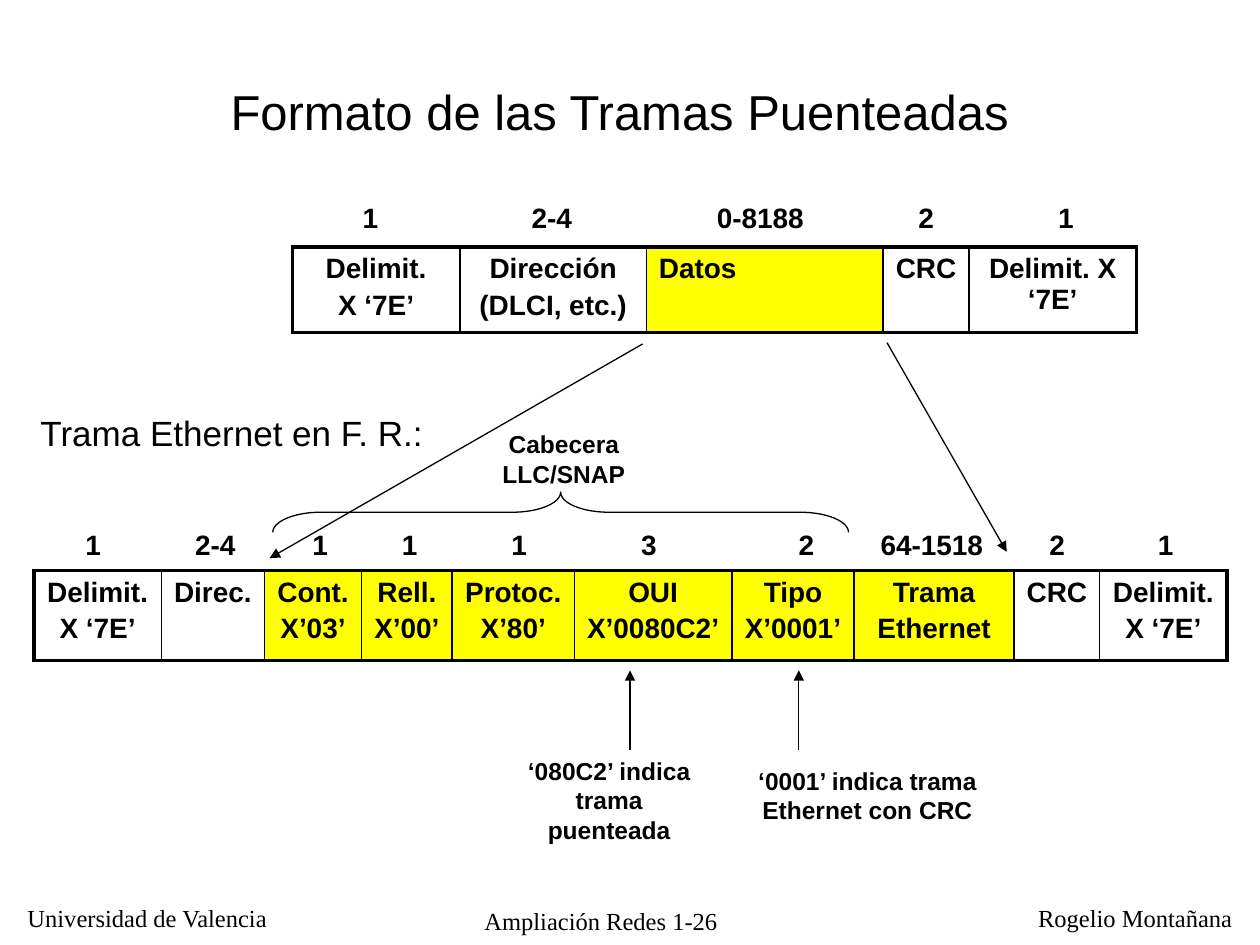
from dataclasses import dataclass

from lxml import etree
from pptx import Presentation
from pptx.dml.color import RGBColor
from pptx.enum.shapes import MSO_CONNECTOR, MSO_SHAPE
from pptx.enum.text import MSO_ANCHOR, MSO_AUTO_SIZE, PP_ALIGN
from pptx.oxml.ns import qn
from pptx.util import Inches, Pt

BLACK = RGBColor(0x00, 0x00, 0x00)
YELLOW = RGBColor(0xFF, 0xFF, 0x00)
LEFT, CENTER = PP_ALIGN.LEFT, PP_ALIGN.CENTER
TOP = MSO_ANCHOR.TOP
GROW = MSO_AUTO_SIZE.SHAPE_TO_FIT_TEXT
STRAIGHT = MSO_CONNECTOR.STRAIGHT
RECTANGLE, BRACE = MSO_SHAPE.RECTANGLE, MSO_SHAPE.RIGHT_BRACE

# Slide grid: 100 columns by 75 rows
GRID_COLUMNS, GRID_ROWS = 100, 75
WIDTH, HEIGHT = Inches(10), Inches(7.5)

TITLE = {"name": "Arial", "size": Pt(28), "bold": False}
HEADING = {"name": "Arial", "size": Pt(20), "bold": False}
FIELD = {"name": "Arial", "size": Pt(16), "bold": True}
CAPTION = {"name": "Arial", "size": Pt(14), "bold": True}
FOOTER = {"name": "Times New Roman", "size": Pt(14), "bold": False}

THIN, INNER, OUTER = Pt(0.75), Pt(1), Pt(2.25)
LABEL_HEIGHT = 3.7
LABEL_WIDTHS = {1: 3.2, 3: 5.2, 6: 8.9, 7: 10.2}  # by number of characters


@dataclass(frozen=True)
class Field:
    lines: tuple[str, ...]
    width: float
    size: str
    size_left: float
    payload: bool = False
    align: PP_ALIGN = CENTER


@dataclass(frozen=True)
class Frame:
    left: float
    top: float
    height: float
    label_top: float
    fields: tuple[Field, ...]


@dataclass(frozen=True)
class Note:
    lines: tuple[str, ...]
    area: tuple[float, float, float, float]
    font: dict
    align: PP_ALIGN = CENTER
    wrap: bool = True


@dataclass(frozen=True)
class Arrow:
    start: tuple[float, float]
    end: tuple[float, float]


ETHERNET_FRAME = Frame(2.7, 45.3, 7.1, 41.4, (
    Field(("Delimit.", "X ‘7E’"), 10.1, "1", 5.8),
    Field(("Direc.",), 8.2, "2-4", 14.5),
    Field(("Cont.", "X’03’"), 7.7, "1", 23.8, True),
    Field(("Rell.", "X’00’"), 7.2, "1", 30.9, True),
    Field(("Protoc.", "X’80’"), 9.7, "1", 39.6, True),
    Field(("OUI", "X’0080C2’"), 12.5, "3", 49.9, True),
    Field(("Tipo", "X’0001’"), 9.7, "2", 62.4, True),
    Field(("Trama", "Ethernet"), 12.7, "64-1518", 68.9, True),
    Field(("CRC",), 6.8, "2", 82.3),
    Field(("Delimit.", "X ‘7E’"), 10.1, "1", 90.9),
))
RELAY_FRAME = Frame(23.2, 19.6, 6.7, 15.4, (
    Field(("Delimit.", "X ‘7E’"), 13.3, "1", 27.8),
    Field(("Dirección", "(DLCI, etc.)"), 14.8, "2-4", 41.2),
    Field(("Datos",), 18.8, "0-8188", 55.9, True, LEFT),
    Field(("CRC",), 6.8, "2", 71.9),
    Field(("Delimit. X ‘7E’",), 13.3, "1", 83),
))
NOTES = (
    Note(("Ampliación Redes 1-26",), (35.1, 71.4, 25.2, 3), FOOTER),
    Note(("Universidad de Valencia",), (1.2, 71.2, 21.3, 3.3), FOOTER, LEFT, False),
    Note(("Rogelio Montañana",), (81.4, 71.2, 17.4, 3.3), FOOTER, LEFT, False),
    Note(("Trama Ethernet en F. R.:",), (1.9, 32.2, 33, 4.3), HEADING),
    Note(("‘080C2’ indica", "trama puenteada"), (39.6, 59.5, 17.5, 5.7), CAPTION),
    Note(("‘0001’ indica trama Ethernet con CRC",), (56.2, 60.3, 25.3, 5.7), CAPTION),
    Note(("Cabecera LLC/SNAP",), (38.8, 33.6, 11.9, 5.7), CAPTION),
)
ARROWS = (
    Arrow((51, 27.3), (21.4, 44.3)),
    Arrow((70.4, 27.2), (79.9, 43.8)),
    Arrow((50, 59.5), (50, 53.2)),
    Arrow((63.4, 59.5), (63.4, 53.2)),
)


def across(columns: float) -> int:
    return round(WIDTH * columns / GRID_COLUMNS)


def down(rows: float) -> int:
    return round(HEIGHT * rows / GRID_ROWS)


def place(left: float, top: float, width: float, height: float) -> tuple:
    return across(left), down(top), across(width), down(height)


def write(text_frame, lines, font: dict, align, before=Pt(0)) -> None:
    for index, line in enumerate(lines):
        para = text_frame.add_paragraph() if index else text_frame.paragraphs[0]
        para.alignment = align
        para.space_before = before
        span = para.add_run()
        span.text = line
        for name, value in font.items():
            setattr(span.font, name, value)
        span.font.color.rgb = BLACK


def draw_note(page, note: Note) -> None:
    box = page.shapes.add_textbox(*place(*note.area))
    box.text_frame.word_wrap = note.wrap
    box.text_frame.auto_size = GROW
    write(box.text_frame, note.lines, note.font, note.align)


def draw_title(page, text: str) -> None:
    title = page.shapes.title
    title.left, title.top, title.width, title.height = place(17.3, 6, 64.2, 5.7)
    title.text_frame.word_wrap = False
    title.text_frame.auto_size = GROW
    title.text_frame.vertical_anchor = TOP
    write(title.text_frame, (text,), TITLE, LEFT)


def draw_shape(page, kind, area: tuple, fill=None):
    shape = page.shapes.add_shape(kind, *place(*area))
    shape.shadow.inherit = False
    if fill is None:
        shape.fill.background()
    else:
        shape.fill.solid()
        shape.fill.fore_color.rgb = fill
    shape.line.color.rgb = BLACK
    shape.line.width = THIN
    return shape


def set_borders(cell, widths: dict) -> None:
    properties = cell._tc.get_or_add_tcPr()
    for index, (side, width) in enumerate(widths.items()):
        border = etree.Element(qn(f"a:{side}"), w=str(int(width)))
        fill = etree.SubElement(border, qn("a:solidFill"))
        etree.SubElement(fill, qn("a:srgbClr"), val=str(BLACK))
        properties.insert(index, border)


def draw_frame(page, frame: Frame) -> None:
    fields = frame.fields
    # Yellow band behind the payload fields
    first = next(i for i, field in enumerate(fields) if field.payload)
    band_left = frame.left + sum(field.width for field in fields[:first])
    band_width = sum(field.width for field in fields if field.payload)
    draw_shape(page, RECTANGLE, (band_left, frame.top, band_width, frame.height), YELLOW)

    # Fields
    total = sum(field.width for field in fields)
    area = place(frame.left, frame.top, total, frame.height)
    table = page.shapes.add_table(1, len(fields), *area).table
    table.first_row = table.horz_banding = False
    last = len(fields) - 1
    for index, field in enumerate(fields):
        table.columns[index].width = across(field.width)
        cell = table.cell(0, index)
        cell.fill.background()
        write(cell.text_frame, field.lines, FIELD, field.align, Pt(3.2))
        set_borders(cell, {"lnL": INNER if index else OUTER,
                           "lnR": OUTER if index == last else INNER,
                           "lnT": OUTER, "lnB": OUTER})

    # Field sizes in bytes
    for field in fields:
        label = (field.size_left, frame.label_top, LABEL_WIDTHS[len(field.size)], LABEL_HEIGHT)
        draw_note(page, Note((field.size,), label, FIELD, LEFT, False))


def draw_arrow(page, arrow: Arrow) -> None:
    (x1, y1), (x2, y2) = arrow.start, arrow.end
    line = page.shapes.add_connector(STRAIGHT, across(x1), down(y1), across(x2), down(y2))
    line.line.color.rgb = BLACK
    line.line.width = THIN
    etree.SubElement(line.line._get_or_add_ln(), qn("a:tailEnd"), type="triangle")
    etree.SubElement(line._element.spPr, qn("a:effectLst"))


def main() -> None:
    deck = Presentation()
    deck.slide_width, deck.slide_height = WIDTH, HEIGHT
    page = deck.slides.add_slide(deck.slide_layouts[5])
    draw_title(page, "Formato de las Tramas Puenteadas")
    for frame in (ETHERNET_FRAME, RELAY_FRAME):
        draw_frame(page, frame)
    for note in NOTES:
        draw_note(page, note)
    for arrow in ARROWS:
        draw_arrow(page, arrow)
    # Brace over the LLC/SNAP header
    brace = draw_shape(page, BRACE, (42.9, 17.8, 3.2, 45.7))
    brace.rotation = 270
    brace.adjustments[0] = 1.2
    deck.save("out.pptx")


if __name__ == "__main__":
    main()
